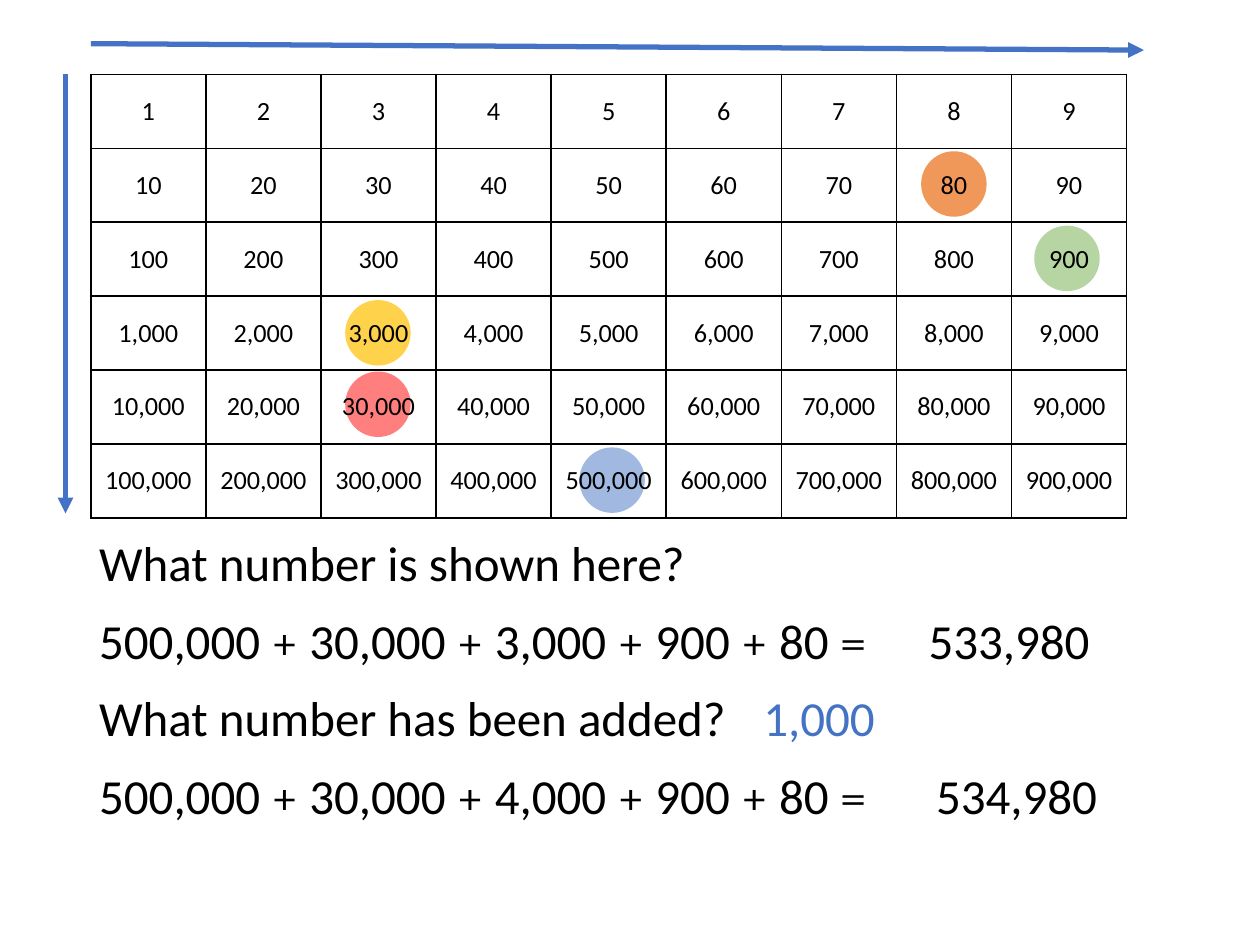
import itertools

import lxml.etree
import pptx
import pptx.dml.color
import pptx.enum.shapes
import pptx.enum.text
import pptx.oxml.ns
import pptx.util
from pptx.util import Cm

BLACK, BLUE = "000000", "4472C4"
LEFT, TOP, WIDE, HIGH = 1.83, 1.5, 2.32, 1.49
ROWS, COLS = 6, 9
DISC = 1.32

# left, top, colour, opacity in percent
DISCS = [
    (11.68, 9.02, BLUE, 50),
    (6.96, 7.49, "FF0000", 50),
    (6.96, 6.05, "FFC000", 70),
    (20.85, 4.55, "70AD47", 50),
    (18.57, 3.05, "ED7D31", 80),
]

# left, top, width, colour, text
LINES = [
    (1.75, 10.62, 12.45, BLACK, "What number is shown here?"),
    (1.75, 12.18, 17.4, BLACK, "500,000 + 30,000 + 3,000 + 900 + 80 ="),
    (18.47, 12.18, 3.81, BLACK, "533,980"),
    (1.75, 13.74, 13.28, BLACK, "What number has been added?"),
    (15.14, 13.74, 2.79, BLUE, "1,000"),
    (1.75, 15.3, 17.4, BLACK, "500,000 + 30,000 + 4,000 + 900 + 80 ="),
    (18.62, 15.3, 3.81, BLACK, "534,980"),
]


def rgb(code):
    return pptx.dml.color.RGBColor.from_string(code)


def add_tag(node, tag, **attrs):
    return lxml.etree.SubElement(node, pptx.oxml.ns.qn(tag), attrs)


def set_font(font, size, color):
    font.name = "Calibri"
    font.size = pptx.util.Pt(size)
    font.color.rgb = rgb(color)


def add_disc(slide, left, top, color, alpha):
    disc = slide.shapes.add_shape(
        pptx.enum.shapes.MSO_SHAPE.OVAL, Cm(left), Cm(top), Cm(DISC), Cm(DISC))
    disc.shadow.inherit = False
    disc.line.fill.background()
    disc.fill.solid()
    disc.fill.fore_color.rgb = rgb(color)
    tint = disc.fill._xPr.find(".//" + pptx.oxml.ns.qn("a:srgbClr"))
    add_tag(tint, "a:alpha", val=str(alpha * 1000))


def set_edges(cell):
    props = cell._tc.get_or_add_tcPr()
    for side in ("a:lnL", "a:lnR", "a:lnT", "a:lnB"):
        edge = add_tag(props, side, w="12700")
        fill = add_tag(edge, "a:solidFill")
        add_tag(fill, "a:srgbClr", val=BLACK)


def add_grid(slide):
    """Place value chart: each row is ten times the one above."""
    table = slide.shapes.add_table(
        ROWS, COLS, Cm(LEFT), Cm(TOP), Cm(WIDE * COLS), Cm(HIGH * ROWS)).table
    table.first_row = table.horz_banding = False
    for row, col in itertools.product(range(ROWS), range(COLS)):
        cell = table.cell(row, col)
        cell.text = f"{(col + 1) * 10 ** row:,}"
        cell.vertical_anchor = pptx.enum.text.MSO_ANCHOR.MIDDLE
        para = cell.text_frame.paragraphs[0]
        para.alignment = pptx.enum.text.PP_ALIGN.CENTER
        set_font(para.font, 15, BLACK)
        set_edges(cell)
        cell.fill.background()


def add_line(slide, left, top, width, color, text):
    """One line of text, with its + and = signs in Cambria."""
    box = slide.shapes.add_textbox(Cm(left), Cm(top), Cm(width), Cm(1.45))
    frame = box.text_frame
    frame.word_wrap = False
    frame.auto_size = pptx.enum.text.MSO_AUTO_SIZE.SHAPE_TO_FIT_TEXT
    para = frame.paragraphs[0]
    set_font(para.font, 28, color)
    for sign, chars in itertools.groupby(text, lambda char: char in "+="):
        run = para.add_run()
        run.text = "".join(chars)
        if sign:
            run.font.name = "Cambria"


def add_arrow(slide, *ends):
    arrow = slide.shapes.add_connector(
        pptx.enum.shapes.MSO_CONNECTOR.STRAIGHT, *map(Cm, ends))
    arrow.line.color.rgb = rgb(BLUE)
    arrow.line.width = pptx.util.Pt(3)
    add_tag(arrow.line._get_or_add_ln(), "a:tailEnd", type="triangle")
    add_tag(arrow._element.spPr, "a:effectLst")


def main():
    deck = pptx.Presentation()
    deck.slide_width, deck.slide_height = Cm(25.4), Cm(19.05)
    slide = deck.slides.add_slide(deck.slide_layouts[6])
    for disc in DISCS:
        add_disc(slide, *disc)
    add_grid(slide)
    for line in LINES:
        add_line(slide, *line)
    add_arrow(slide, LEFT, 0.88, 23.06, 1.01)
    add_arrow(slide, 1.32, TOP, 1.32, 10.35)
    deck.save("out.pptx")


if __name__ == "__main__":
    main()
